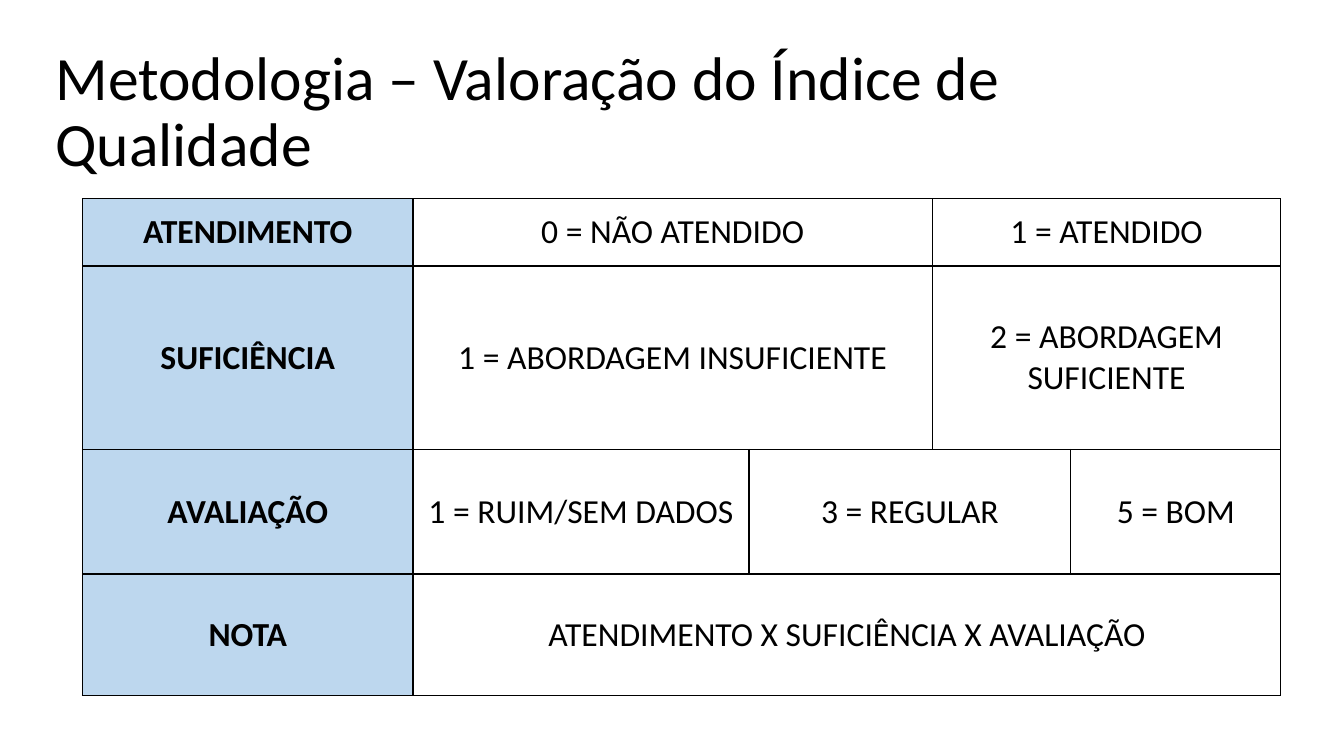
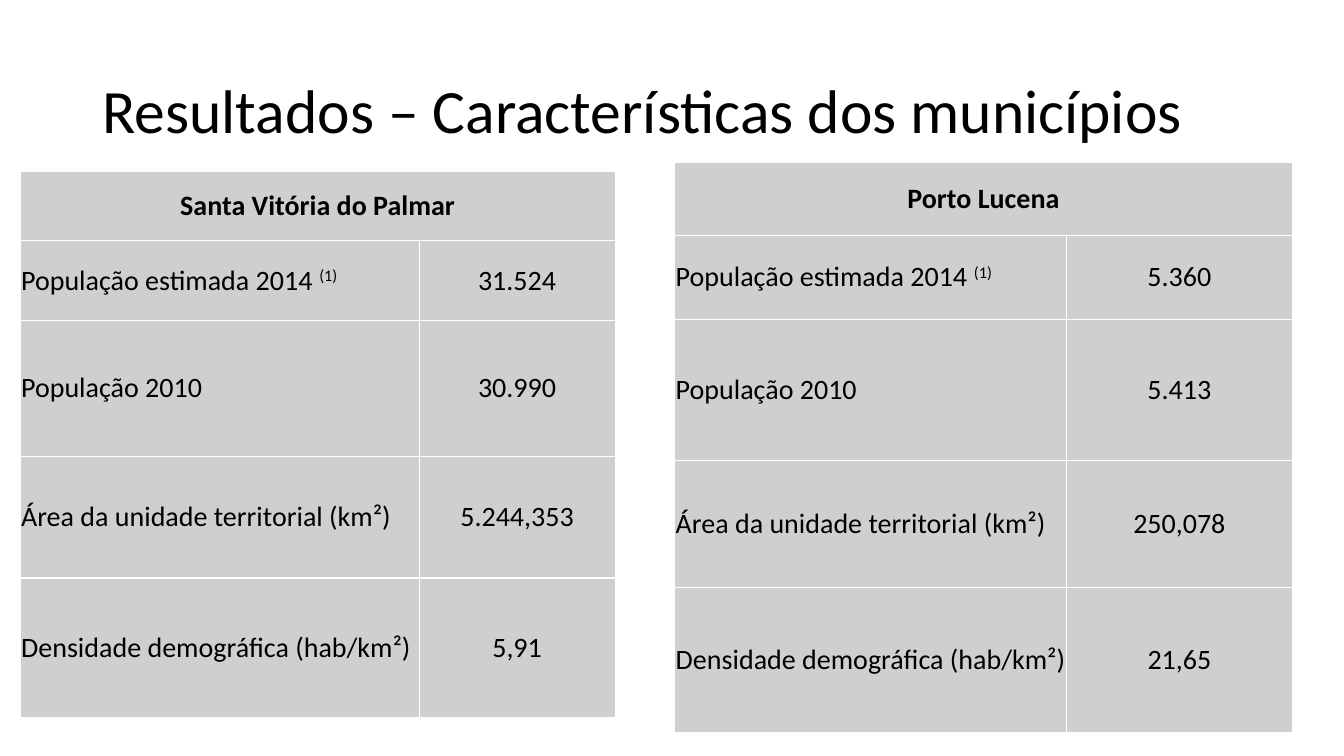
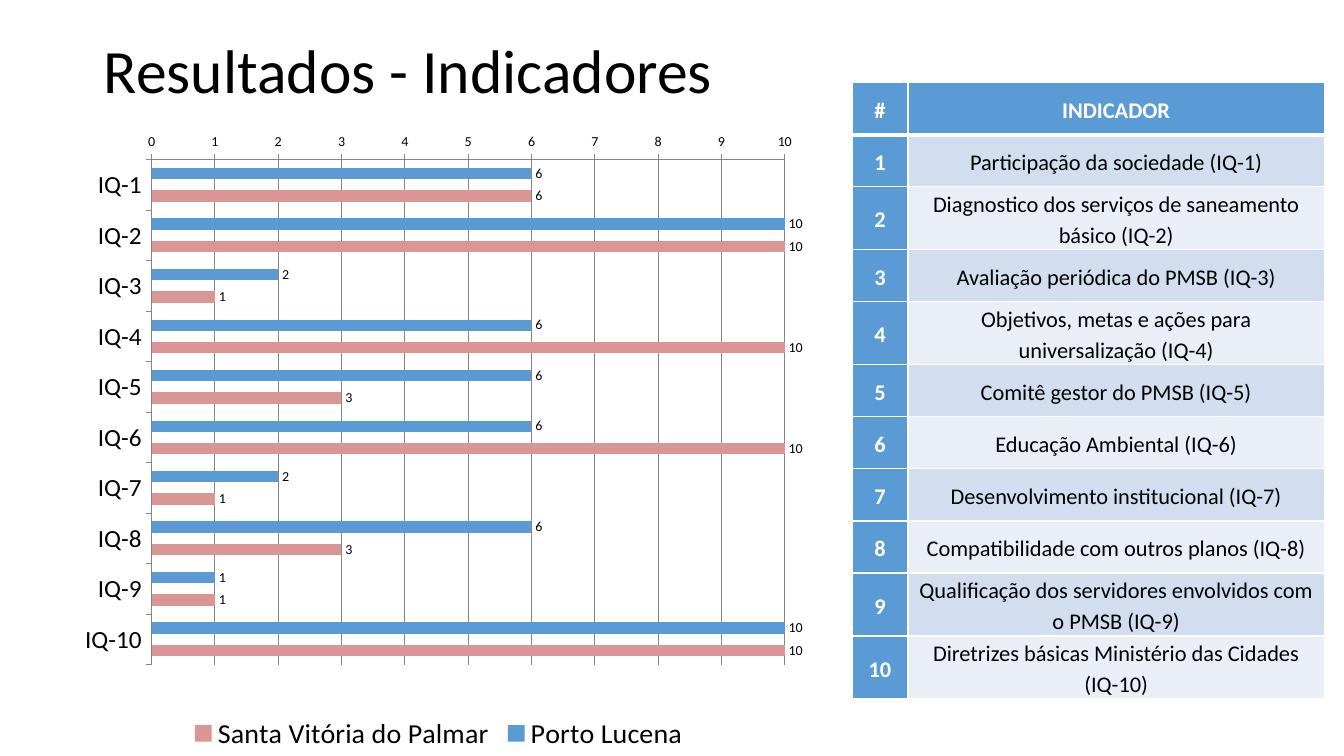
"""Build three slides on the quality index of municipal sanitation plans."""
import pptx
import pptx.chart.data
import pptx.dml.color
import pptx.enum.chart
import pptx.enum.text
import pptx.oxml
import pptx.oxml.ns
import pptx.util

Pt = pptx.util.Pt
FONT = "Calibri"
BLACK, WHITE = "000000", "FFFFFF"
BLUE, PALE_BLUE, GREY, ROSE = "5B9BD5", "BDD7EE", "D0CECE", "D99694"
BANDS = ["D2DEEF", "EAEFF7"]
CENTER = pptx.enum.text.PP_ALIGN.CENTER
LEFT = pptx.enum.text.PP_ALIGN.LEFT
MIDDLE = pptx.enum.text.MSO_ANCHOR.MIDDLE
NAMESPACES = pptx.oxml.ns.nsdecls("a", "c")


def color(value):
    """Turn a hex string into a colour."""
    return pptx.dml.color.RGBColor.from_string(value)


def add_grid(slide, left, top, widths, heights, rows, size, border, side_margin=0.7, header_line=1):
    """Add a bordered table, where None joins a cell to the one on its left."""
    table = slide.shapes.add_table(
        len(heights), len(widths), Pt(left), Pt(top), Pt(sum(widths)), Pt(sum(heights))
    ).table
    for column, width in zip(table.columns, widths):
        column.width = Pt(width)
    for row_index, texts in enumerate(rows):
        table.rows[row_index].height = Pt(heights[row_index])
        for column_index, text in enumerate(texts):
            cell = table.cell(row_index, column_index)
            cell.margin_left = cell.margin_right = Pt(side_margin)
            cell.margin_top = cell.margin_bottom = 0
            cell.vertical_anchor = MIDDLE
            properties = cell._tc.get_or_add_tcPr()
            for side in ("L", "R", "T", "B"):
                weight = header_line if side == "B" and row_index == 0 else 1
                properties.append(pptx.oxml.parse_xml(
                    f'<a:ln{side} {NAMESPACES} w="{Pt(weight)}"><a:solidFill>'
                    f'<a:srgbClr val="{border}"/></a:solidFill></a:ln{side}>'
                ))
            cell.fill.background()
            if text is None:
                continue
            span_end = column_index
            while span_end + 1 < len(texts) and texts[span_end + 1] is None:
                span_end += 1
            if span_end > column_index:
                cell.merge(table.cell(row_index, span_end))
            cell.text = text
            paragraph = cell.text_frame.paragraphs[0]
            paragraph.alignment = CENTER
            paragraph.font.name = FONT
            paragraph.font.size = Pt(size)
            paragraph.font.bold = False
            paragraph.font.color.rgb = color(BLACK)
    return table


presentation = pptx.Presentation()
presentation.slide_width = Pt(960)
presentation.slide_height = Pt(540)

titles = [
    ("Metodologia – Valoração do Índice de Qualidade", 32.4, 28.8, 878),
    ("Resultados – Características dos municípios", 66, 28.8, 828),
    ("Resultados - Indicadores", 67, 0, 828),
]
slides = []
for text, left, top, width in titles:
    slide = presentation.slides.add_slide(presentation.slide_layouts[5])
    title = slide.shapes.title
    title.left, title.top, title.width, title.height = Pt(left), Pt(top), Pt(width), Pt(104.4)
    title.text_frame.text = text
    title.text_frame.auto_size = pptx.enum.text.MSO_AUTO_SIZE.NONE
    title.text_frame.vertical_anchor = MIDDLE
    paragraph = title.text_frame.paragraphs[0]
    paragraph.alignment = LEFT
    paragraph.line_spacing = 0.9
    paragraph.font.name = FONT
    paragraph.font.size = Pt(44)
    paragraph.font.color.rgb = color(BLACK)
    slides.append(slide)
method_slide, towns_slide, indicators_slide = slides

scores = [
    ["ATENDIMENTO", "0 = NÃO ATENDIDO", None, "1 = ATENDIDO", None],
    ["SUFICIÊNCIA", "1 = ABORDAGEM INSUFICIENTE", None, "2 = ABORDAGEM SUFICIENTE", None],
    ["AVALIAÇÃO", "1 = RUIM/SEM DADOS", "3 = REGULAR", None, "5 = BOM"],
    ["NOTA", "ATENDIMENTO X SUFICIÊNCIA X AVALIAÇÃO", None, None, None],
]
table = add_grid(method_slide, 59, 142, [236, 240, 131, 99, 150], [48, 131, 89, 87], scores, 24, BLACK)
for row in table.rows:
    cell = row.cells[0]
    cell.fill.solid()
    cell.fill.fore_color.rgb = color(PALE_BLUE)
    cell.text_frame.paragraphs[0].font.bold = True

features = [
    "População estimada 2014 ",
    "População 2010",
    "Área da unidade territorial (km²)",
    "Densidade demográfica (hab/km²)",
]
towns = [
    ("Porto Lucena", 482, 116, [280, 161], [52, 60, 101, 90.5, 103.5],
     ["5.360", "5.413", "250,078", "21,65"]),
    ("Santa Vitória do Palmar", 14.4, 122.4, [285, 140], [49.5, 57, 97, 87, 99.5],
     ["31.524", "30.990", "5.244,353", "5,91"]),
]
for town, left, top, widths, heights, values in towns:
    rows = [[town, None]] + [list(pair) for pair in zip(features, values)]
    table = add_grid(towns_slide, left, top, widths, heights, rows, 20, WHITE)
    for cell in table.iter_cells():
        cell.fill.solid()
        cell.fill.fore_color.rgb = color(GREY)
    table.cell(0, 0).text_frame.paragraphs[0].font.bold = True
    for row_index in range(1, len(rows)):
        table.cell(row_index, 0).text_frame.paragraphs[0].alignment = LEFT
    note = table.cell(1, 0).text_frame.paragraphs[0].add_run()
    note.text = "(1)"
    note._r.get_or_add_rPr().set("baseline", "30000")

chart_data = pptx.chart.data.CategoryChartData()
chart_data.categories = [f"IQ-{number}" for number in range(1, 11)]
chart_data.add_series("Porto Lucena", [6, 10, 2, 6, 6, 6, 2, 6, 1, 10])
chart_data.add_series("Series 2", [None] * 10)
chart_data.add_series("Santa Vitória do Palmar", [6, 10, 1, 10, 3, 10, 1, 3, 1, 10])
chart = indicators_slide.shapes.add_chart(
    pptx.enum.chart.XL_CHART_TYPE.BAR_CLUSTERED, Pt(50.4), Pt(96), Pt(526), Pt(444), chart_data
).chart
chart.has_title = False
chart.font.name = FONT
chart.font.size = Pt(10)
chart.font.color.rgb = color(BLACK)
plot = chart.plots[0]
plot.gap_width = 150
plot.overlap = 0
plot.vary_by_categories = False
for series, fill in zip(plot.series, [BLUE, "A5A5A5", ROSE]):
    series.format.fill.solid()
    series.format.fill.fore_color.rgb = color(fill)
    series.data_labels.show_value = True
    series.data_labels.position = pptx.enum.chart.XL_LABEL_POSITION.OUTSIDE_END

category_axis, value_axis = chart.category_axis, chart.value_axis
category_axis.reverse_order = True
category_axis.crosses = pptx.enum.chart.XL_AXIS_CROSSES.MAXIMUM
category_axis.tick_labels.font.size = Pt(18)
value_axis.minimum_scale = 0
value_axis.maximum_scale = 10
value_axis.major_unit = 1
value_axis.has_major_gridlines = True
for axis in (category_axis, value_axis):
    axis.major_tick_mark = pptx.enum.chart.XL_TICK_MARK.OUTSIDE
for lined in (category_axis, value_axis, value_axis.major_gridlines):
    lined.format.line.color.rgb = color("868686")
    lined.format.line.width = Pt(0.75)

chart.has_legend = True
legend = chart.legend
legend.position = pptx.enum.chart.XL_LEGEND_POSITION.BOTTOM
legend.include_in_layout = False
legend.font.size = Pt(20)
legend._element.insert(1, pptx.oxml.parse_xml(
    f'<c:legendEntry {NAMESPACES}><c:idx val="1"/><c:delete val="1"/></c:legendEntry>'
))
plot_area = chart._chartSpace.chart.plotArea
for old_layout in plot_area.findall(pptx.oxml.ns.qn("c:layout")):
    plot_area.remove(old_layout)
plot_area.insert(0, pptx.oxml.parse_xml(
    f'<c:layout {NAMESPACES}><c:manualLayout><c:layoutTarget val="inner"/>'
    '<c:xMode val="edge"/><c:yMode val="edge"/><c:x val="0.11"/><c:y val="0.02"/>'
    '<c:w val="0.86"/><c:h val="0.83"/></c:manualLayout></c:layout>'
))

indicators = [
    "Participação da sociedade",
    "Diagnostico dos serviços de saneamento básico",
    "Avaliação periódica do PMSB",
    "Objetivos, metas e ações para universalização",
    "Comitê gestor do PMSB",
    "Educação Ambiental",
    "Desenvolvimento institucional",
    "Compatibilidade com outros planos",
    "Qualificação dos servidores envolvidos com o PMSB",
    "Diretrizes básicas Ministério das Cidades",
]
rows = [["#", "INDICADOR"]]
for number, indicator in enumerate(indicators, start=1):
    rows.append([str(number), f"{indicator} (IQ-{number})"])
table = add_grid(
    indicators_slide, 608.5, 59, [40, 297.5], [37.2] * len(rows), rows, 16, WHITE,
    side_margin=3.6, header_line=3,
)
for row_index, row in enumerate(table.rows):
    for column_index, cell in enumerate(row.cells):
        is_header = row_index == 0 or column_index == 0
        cell.fill.solid()
        cell.fill.fore_color.rgb = color(BLUE if is_header else BANDS[(row_index - 1) % 2])
        paragraph = cell.text_frame.paragraphs[0]
        paragraph.line_spacing = 1.15
        paragraph.font.bold = is_header
        paragraph.font.color.rgb = color(WHITE if is_header else BLACK)

presentation.save("out.pptx")
